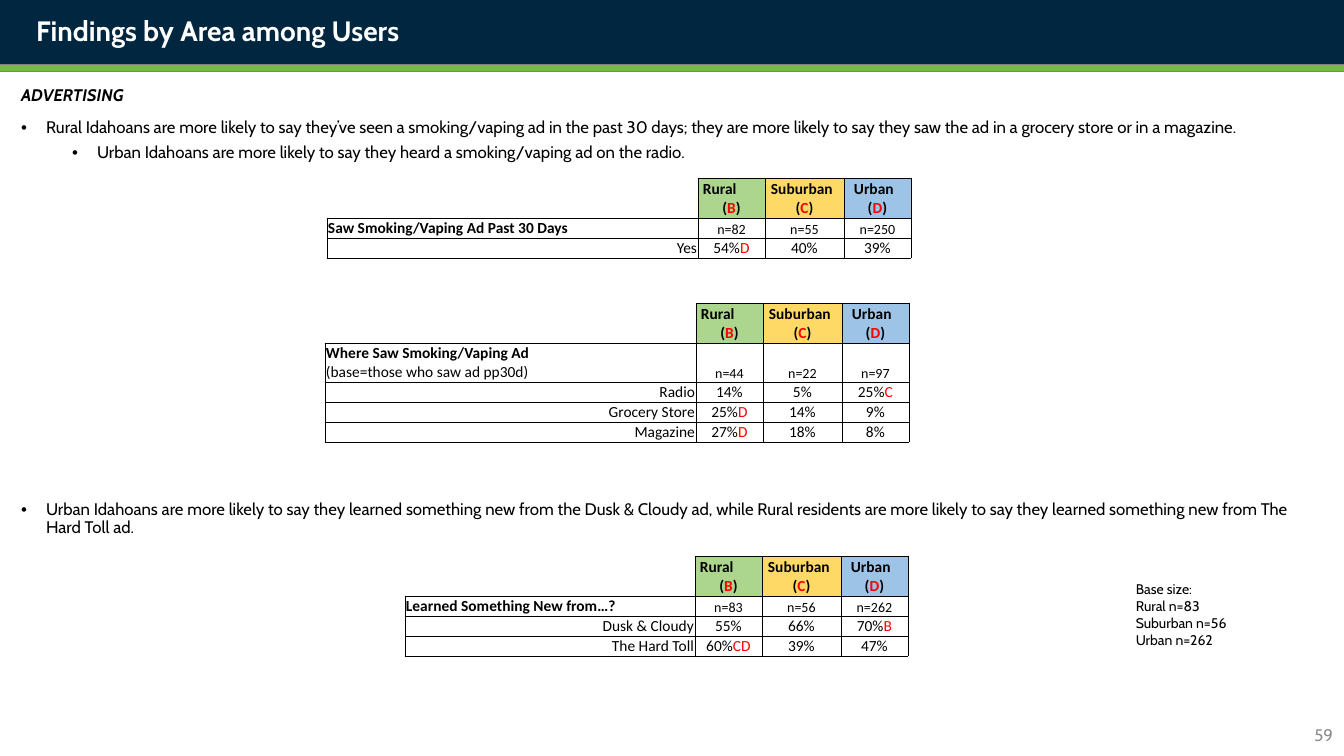
from lxml.etree import SubElement
from pptx import Presentation
from pptx.dml.color import RGBColor
from pptx.enum.shapes import MSO_CONNECTOR, MSO_SHAPE
from pptx.enum.text import MSO_ANCHOR as Anchor, MSO_AUTO_SIZE as AutoSize, PP_ALIGN as Align
from pptx.oxml import parse_xml
from pptx.oxml.ns import nsdecls, qn
from pptx.util import Pt

TITLE = "Findings by Area among Users"
PAGE_NUMBER = "59"
BASE_SIZES = ["Base size:", "Rural n=83", "Suburban n=56", "Urban n=262"]

# text, indent in px (None: heading without bullet), space before in pt
FINDINGS = [
    ("ADVERTISING", None, 0),
    ("Rural Idahoans are more likely to say they’ve seen a smoking/vaping ad in the past 30 days; "
     "they are more likely to say they saw the ad in a grocery store or in a magazine.", 25, 10),
    ("Urban Idahoans are more likely to say they heard a smoking/vaping ad on the radio.", 76, 5),
    ("Urban Idahoans are more likely to say they learned something new from the Dusk & Cloudy ad, "
     "while Rural residents are more likely to say they learned something new from The Hard Toll ad.",
     25, 242),
]
# name, letter, fill, indent in px, column width in px
AREAS = [
    ("Rural", "B", "ACD68E", 4, 67),
    ("Suburban", "C", "FFD966", 5, 79),
    ("Urban", "D", "9DC3E6", 9, 67),
]
TABLES = [
    {"at": (327, 178), "label_width": 371,
     "question": ["Saw Smoking/Vaping Ad Past 30 Days"], "bases": ["n=82", "n=55", "n=250"],
     "answers": [("Yes", "54%D", "40%", "39%")]},
    {"at": (325, 303), "label_width": 371,
     "question": ["Where Saw Smoking/Vaping Ad", "(base=those who saw ad pp30d)"],
     "bases": ["n=44", "n=22", "n=97"],
     "answers": [("Radio", "14%", "5%", "25%C"),
                 ("Grocery Store", "25%D", "14%", "9%"),
                 ("Magazine", "27%D", "18%", "8%")]},
    {"at": (405, 556), "label_width": 290,
     "question": ["Learned Something New from…?"], "bases": ["n=83", "n=56", "n=262"],
     "answers": [("Dusk & Cloudy", "55%", "66%", "70%B"),
                 ("The Hard Toll", "60%CD", "39%", "47%")]},
]
BLACK, RED, WHITE, NAVY, GREEN = "000000", "FF0000", "FFFFFF", "00273F", "75BA43"
GRAY, PAGE_GRAY = "808080", "8C8C8C"
SLIDE_WIDTH, SLIDE_HEIGHT = 1344, 756
HEADER_ROW, ROW, TWO_LINE_ROW = 40, 20, 38


def px(length):
    return round(length * 914400 / 100.8)


def color(hex_code):
    return RGBColor.from_string(hex_code)


def assign(target, **values):
    for name, value in values.items():
        setattr(target, name, value)


def place(shape, left, top, width, height):
    assign(shape, left=px(left), top=px(top), width=px(width), height=px(height))


def write(paragraph, text, size, ink=BLACK, face="Cabin", bold=False, italic=False):
    run = paragraph.add_run()
    run.text = text
    assign(run.font, size=Pt(size), name=face, bold=bold, italic=italic)
    run.font.color.rgb = color(ink)


def set_frame(frame, anchor=Anchor.TOP):
    assign(frame, word_wrap=True, auto_size=AutoSize.NONE, vertical_anchor=anchor)
    return frame


def next_paragraph(frame, index):
    return frame.paragraphs[0] if index == 0 else frame.add_paragraph()


def add_band(height, fill, layer):
    """Full-width bar at the top, kept behind the placeholders."""
    band = slide.shapes.add_shape(MSO_SHAPE.RECTANGLE, 0, 0, px(SLIDE_WIDTH), px(height))
    band.shadow.inherit = False
    band.fill.solid()
    band.fill.fore_color.rgb = color(fill)
    band.line.fill.background()
    slide.shapes._spTree.insert(2 + layer, band._element)


def add_text(box, lines, size, ink=BLACK, align=Align.LEFT, anchor=Anchor.TOP):
    frame = set_frame(slide.shapes.add_textbox(*map(px, box)).text_frame, anchor)
    for index, line in enumerate(lines):
        paragraph = next_paragraph(frame, index)
        paragraph.alignment = align
        write(paragraph, line, size, ink)


def add_findings(body):
    frame = set_frame(body.text_frame)
    for index, (text, indent, space) in enumerate(FINDINGS):
        paragraph = next_paragraph(frame, index)
        heading = indent is None
        paragraph.level = 1 if indent == 76 else 0
        properties = paragraph._p.get_or_add_pPr()
        properties.set("marL", str(px(indent or 0)))
        properties.set("indent", str(0 if heading else -px(25)))
        if heading:
            SubElement(properties, qn("a:buNone"))
        else:
            SubElement(properties, qn("a:buFont")).set("typeface", "Arial")
            SubElement(properties, qn("a:buChar")).set("char", "•")
        assign(paragraph, line_spacing=0.9, space_before=Pt(space), alignment=Align.LEFT)
        write(paragraph, text, 12, bold=heading, italic=heading)


def set_cell(cell, fill=None, sides="LRTB"):
    """Margins, fill and borders; sides not listed get no line."""
    assign(cell, margin_left=px(1), margin_right=px(1), margin_top=px(1), margin_bottom=0,
           vertical_anchor=Anchor.BOTTOM)
    if fill:
        cell.fill.solid()
        cell.fill.fore_color.rgb = color(fill)
    else:
        cell.fill.background()
    properties = cell._tc.get_or_add_tcPr()
    for index, side in enumerate("LRTB"):
        paint = f'<a:solidFill><a:srgbClr val="{BLACK}"/></a:solidFill>' if side in sides else "<a:noFill/>"
        properties.insert(index, parse_xml(
            f'<a:ln{side} {nsdecls("a")} w="{Pt(0.5)}">{paint}</a:ln{side}>'))


def cell_line(cell, index, align, parts, size=11, bold=False, indent=0):
    """One paragraph of a cell, from (text, colour) parts."""
    paragraph = next_paragraph(cell.text_frame, index)
    paragraph.alignment = align
    paragraph._p.get_or_add_pPr().set("marL", str(px(indent)))
    for text, ink in parts:
        write(paragraph, text, size, ink, "Calibri", bold)


def add_area_table(at, label_width, question, bases, answers):
    widths = [label_width] + [area[-1] for area in AREAS]
    heights = [HEADER_ROW, TWO_LINE_ROW if len(question) > 1 else ROW] + [ROW] * len(answers)
    box = (*at, sum(widths), sum(heights))
    table = slide.shapes.add_table(len(heights), len(widths), *map(px, box)).table
    assign(table, first_row=False, horz_banding=False)
    for column, width in zip(table.columns, widths):
        column.width = px(width)
    for row, height in zip(table.rows, heights):
        row.height = px(height)

    set_cell(table.cell(0, 0), sides="RB")
    for column, (area, letter, fill, indent, _) in enumerate(AREAS, 1):
        cell = table.cell(0, column)
        set_cell(cell, fill)
        cell_line(cell, 0, Align.LEFT, [(area, BLACK)], bold=True, indent=indent)
        cell_line(cell, 1, Align.CENTER, [("(", BLACK), (letter, RED), (")", BLACK)], bold=True)

    set_cell(table.cell(1, 0))
    for index, line in enumerate(question):
        cell_line(table.cell(1, 0), index, Align.LEFT, [(line, BLACK)], bold=index == 0)
    for column, base in enumerate(bases, 1):
        set_cell(table.cell(1, column))
        cell_line(table.cell(1, column), 0, Align.CENTER, [(base, BLACK)], size=10)

    for row, (answer, *shares) in enumerate(answers, 2):
        set_cell(table.cell(row, 0))
        cell_line(table.cell(row, 0), 0, Align.RIGHT, [(answer, BLACK)])
        for column, share in enumerate(shares, 1):
            number, percent, letters = share.partition("%")
            parts = [(number + percent, BLACK)] + ([(letters, RED)] if letters else [])
            set_cell(table.cell(row, column))
            cell_line(table.cell(row, column), 0, Align.CENTER, parts)


deck = Presentation()
assign(deck, slide_width=px(SLIDE_WIDTH), slide_height=px(SLIDE_HEIGHT))
slide = deck.slides.add_slide(deck.slide_layouts[1])

add_band(72, GRAY, 0)
add_band(64, NAVY, 1)

title = slide.shapes.title
place(title, 26, 8, 1032, 44)
title_line = set_frame(title.text_frame).paragraphs[0]
title_line.alignment = Align.LEFT
write(title_line, TITLE, 20, WHITE, bold=True)

findings = slide.placeholders[1]
place(findings, 11, 82, 1322, 600)
add_findings(findings)

add_text((1041, 715, 302, 40), [PAGE_NUMBER], 12, PAGE_GRAY, Align.RIGHT, Anchor.MIDDLE)

rule = slide.shapes.add_connector(MSO_CONNECTOR.STRAIGHT, 0, px(68), px(SLIDE_WIDTH), px(68))
rule.line.width = Pt(4.5)
rule.line.color.rgb = color(GREEN)
SubElement(rule._element.spPr, qn("a:effectLst"))

for area_table in TABLES:
    add_area_table(**area_table)

add_text((1126, 576, 135, 78), BASE_SIZES, 10)

deck.save("out.pptx")
